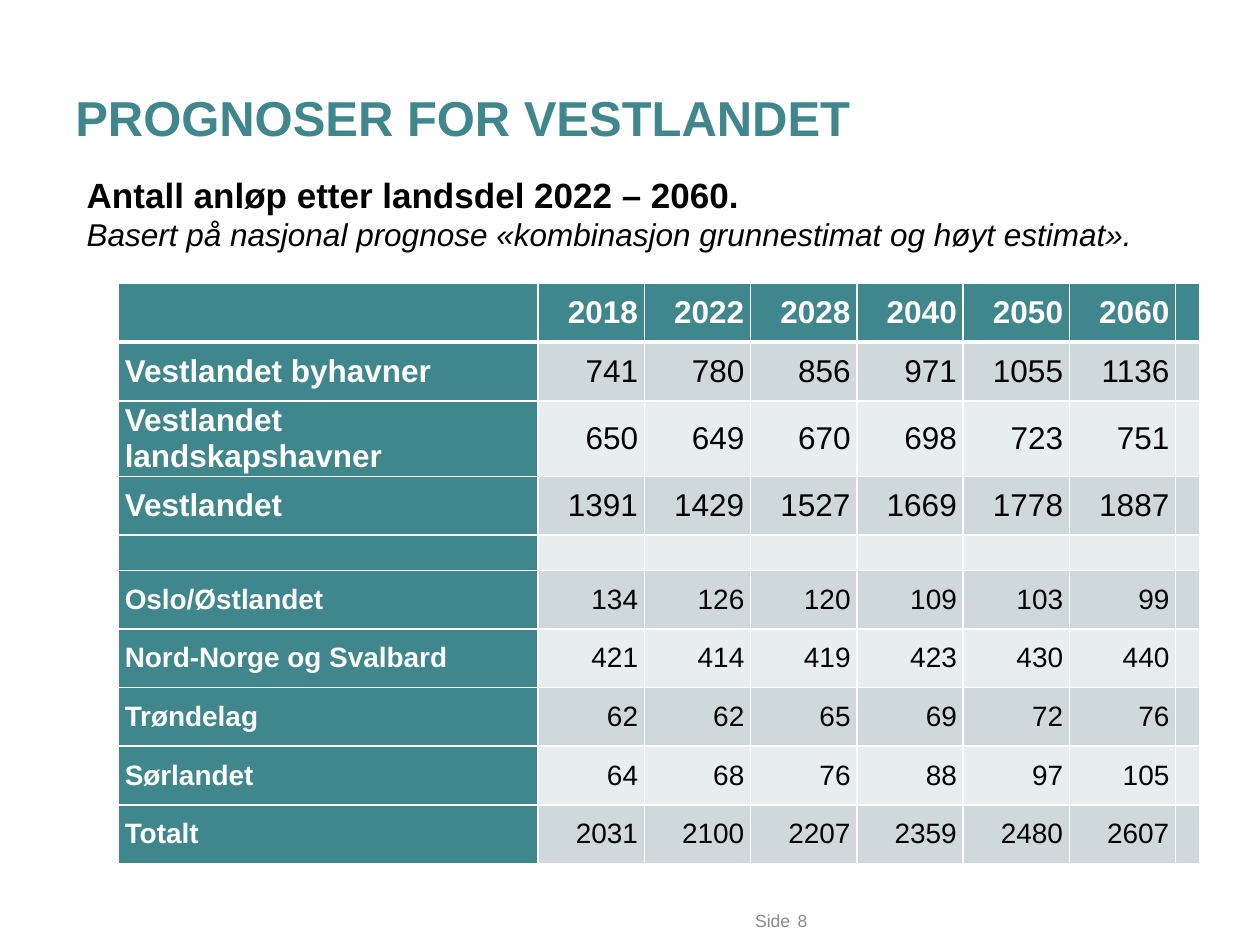
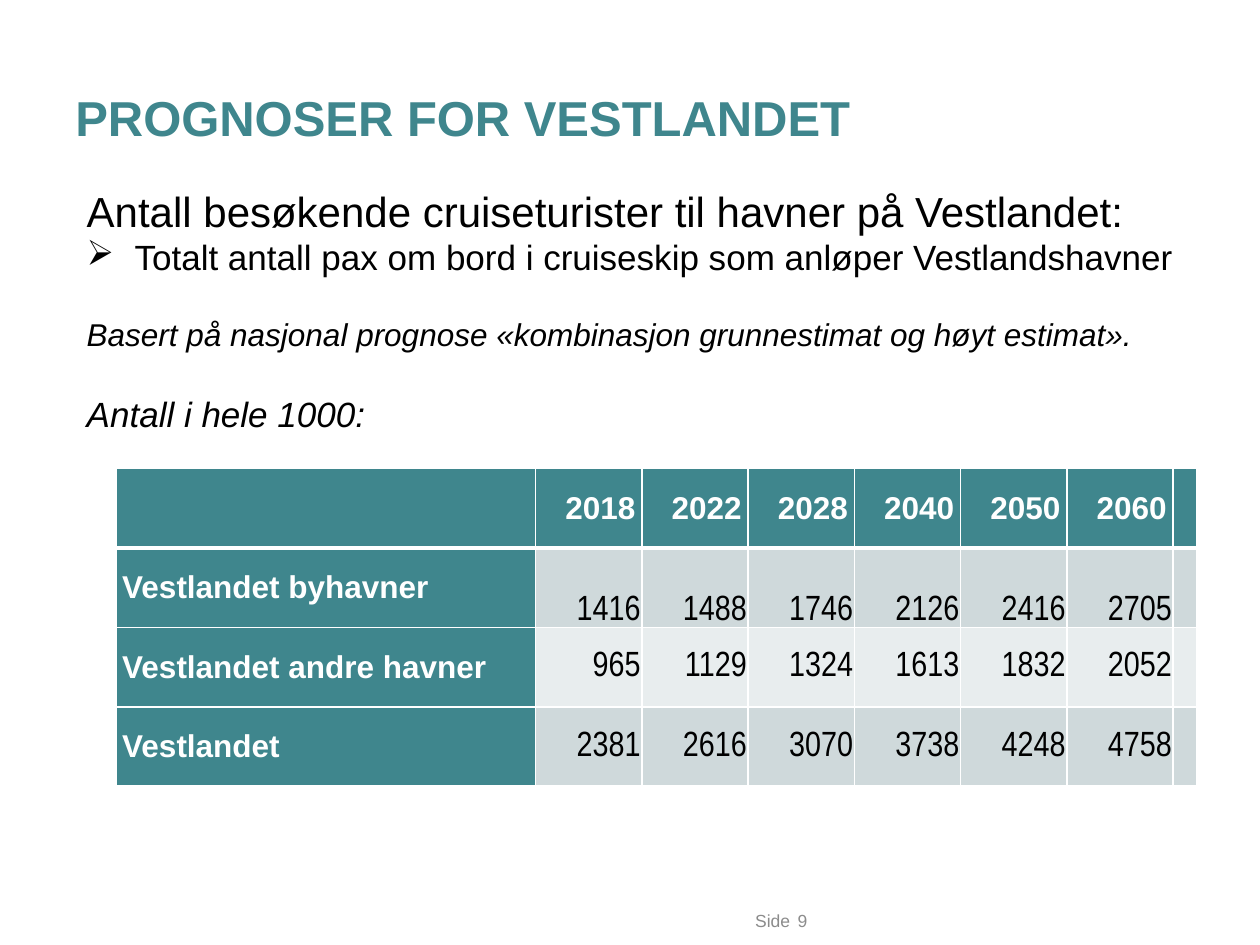
from lxml import etree
from pptx import Presentation
from pptx import util as u
from pptx.dml.color import RGBColor
from pptx.enum import text as t
from pptx.oxml import ns

TEAL = RGBColor(0x3F, 0x86, 0x8D)
BAND_DARK = RGBColor(0xCF, 0xD9, 0xDB)
BAND_LIGHT = RGBColor(0xE8, 0xED, 0xEE)
GREY = RGBColor(0x8C, 0x8C, 0x8C)
WHITE = RGBColor(0xFF, 0xFF, 0xFF)
BLACK = RGBColor(0, 0, 0)

RIGHT = t.PP_ALIGN.RIGHT
LEFT = t.PP_ALIGN.LEFT
MIDDLE = t.MSO_ANCHOR.MIDDLE
BOTTOM = t.MSO_ANCHOR.BOTTOM

TABLE_WIDTH, LABEL_WIDTH, EDGE_WIDTH = 8.58, 3.33, 0.19
SPACER_HEIGHT = 0.28
YEARS = ["2018", "2022", "2028", "2040", "2050", "2060"]
BASIS = "Basert på nasjonal prognose «kombinasjon grunnestimat og høyt estimat»."

CALLS = [
    ("Vestlandet byhavner", 741, 780, 856, 971, 1055, 1136),
    ("Vestlandet landskapshavner", 650, 649, 670, 698, 723, 751),
    ("Vestlandet", 1391, 1429, 1527, 1669, 1778, 1887),
    ("",) * 7,
    ("Oslo/Østlandet", 134, 126, 120, 109, 103, 99),
    ("Nord-Norge og Svalbard", 421, 414, 419, 423, 430, 440),
    ("Trøndelag", 62, 62, 65, 69, 72, 76),
    ("Sørlandet", 64, 68, 76, 88, 97, 105),
    ("Totalt", 2031, 2100, 2207, 2359, 2480, 2607),
]
PASSENGERS = [
    ("Vestlandet byhavner", 1416, 1488, 1746, 2126, 2416, 2705),
    ("Vestlandet andre havner", 965, 1129, 1324, 1613, 1832, 2052),
    ("Vestlandet", 2381, 2616, 3070, 3738, 4248, 4758),
]


def write(paragraph, text, size=18, color=BLACK, bold=False, italic=False,
          font="Arial", align=LEFT, before=0, bullet=None):
    paragraph.alignment = align
    if before:
        paragraph.space_before = u.Pt(before)
    if bullet:
        properties = paragraph._p.get_or_add_pPr()
        properties.set("marL", str(u.Inches(0.38)))
        properties.set("indent", str(-u.Inches(0.38)))
        etree.SubElement(properties, ns.qn("a:buChar")).set("char", bullet)
    run = paragraph.add_run()
    run.text = text
    run.font.name = font
    run.font.size = u.Pt(size)
    run.font.bold = bold
    run.font.italic = italic
    run.font.color.rgb = color


def add_text(slide, left, top, width, height, lines, margins=(0.1, 0.05)):
    box = slide.shapes.add_textbox(*map(u.Inches, (left, top, width, height)))
    frame = box.text_frame
    frame.word_wrap = True
    frame.vertical_anchor = MIDDLE
    frame.margin_left = frame.margin_right = u.Inches(margins[0])
    frame.margin_top = frame.margin_bottom = u.Inches(margins[1])
    for index, (text, style) in enumerate(lines):
        paragraph = frame.add_paragraph() if index else frame.paragraphs[0]
        write(paragraph, text, **style)


def add_forecast_slide(presentation, number):
    slide = presentation.slides.add_slide(presentation.slide_layouts[6])
    add_text(slide, 0.5, 0.3, 9, 1.25, [
        ("PROGNOSER FOR VESTLANDET", dict(size=28, color=TEAL, bold=True))])
    for left, text, align in ((5.79, "Side", RIGHT), (6.33, str(number), LEFT)):
        add_text(slide, left, 7.16, 0.48, 0.29,
                 [(text, dict(size=10, color=GREY, align=align))], margins=(0, 0))
    return slide


def set_borders(cell, top, bottom):
    properties = cell._tc.get_or_add_tcPr()
    for side, points in (("L", 1), ("R", 1), ("T", top), ("B", bottom)):
        line = etree.SubElement(properties, ns.qn(f"a:ln{side}"), w=str(u.Pt(points)))
        fill = etree.SubElement(line, ns.qn("a:solidFill"))
        etree.SubElement(fill, ns.qn("a:srgbClr"), val=str(WHITE))


def fill_cell(cell, text, background, row, anchor=MIDDLE, margins=(0.05, 0), **style):
    set_borders(cell, top=3 if row == 1 else 1, bottom=3 if row == 0 else 1)
    cell.fill.solid()
    cell.fill.fore_color.rgb = background
    cell.vertical_anchor = anchor
    cell.margin_left = cell.margin_right = u.Inches(margins[0])
    cell.margin_top = u.Inches(margins[1])
    cell.margin_bottom = 0
    paragraph = cell.text_frame.paragraphs[0]
    if text:
        write(paragraph, text, **style)
    else:
        etree.SubElement(paragraph._p, ns.qn("a:endParaRPr"), sz="1000")


def add_forecast_table(slide, left, top, records, row_height, label_style, number_style):
    rows = [("", *YEARS, "")] + [(*record, "") for record in records]
    table = slide.shapes.add_table(
        len(rows), len(rows[0]), u.Inches(left), u.Inches(top),
        u.Inches(TABLE_WIDTH), u.Inches(row_height * len(rows))).table
    year_width = (TABLE_WIDTH - LABEL_WIDTH - EDGE_WIDTH) / len(YEARS)
    widths = [LABEL_WIDTH] + [year_width] * len(YEARS) + [EDGE_WIDTH]
    for column, width in zip(table.columns, widths):
        column.width = u.Inches(width)
    for row, values in enumerate(rows):
        table.rows[row].height = u.Inches(row_height if any(values) else SPACER_HEIGHT)
        band = BAND_DARK if row % 2 else BAND_LIGHT
        for column, value in enumerate(values):
            if row == 0:
                background, style = TEAL, dict(color=WHITE, bold=True, align=RIGHT)
            elif column == 0:
                background, style = TEAL, dict(color=WHITE, bold=True, **label_style(row))
            else:
                background, style = band, dict(align=RIGHT, **number_style(row))
            fill_cell(table.cell(row, column), str(value), background, row, **style)


def call_style(row):
    return dict(size=18 if row <= 3 else 16)


def passenger_label_style(row):
    return dict(size=18)


def passenger_number_style(row):
    return dict(size=20, font="Arial Narrow", margins=(0.01, 0.01),
                anchor=BOTTOM if row == 1 else MIDDLE)


def add_calls(presentation):
    slide = add_forecast_slide(presentation, 8)
    add_forecast_table(slide, 0.94, 2.25, CALLS, 4.19 / 9, call_style, call_style)
    add_text(slide, 0.59, 1.32, 9.74, 0.74, [
        ("Antall anløp etter landsdel 2022 – 2060.", dict(size=20, bold=True)),
        (BASIS, dict(italic=True)),
    ])


def add_passengers(presentation):
    slide = add_forecast_slide(presentation, 9)
    add_forecast_table(slide, 0.92, 3.72, PASSENGERS, 0.63,
                       passenger_label_style, passenger_number_style)
    add_text(slide, 0.59, 1.4, 9.74, 2.12, [
        ("Antall besøkende cruiseturister til havner på Vestlandet:", dict(size=24)),
        ("Totalt antall pax om bord i cruiseskip som anløper Vestlandshavner",
         dict(size=20, bullet="➢")),
        (BASIS, dict(italic=True, before=21)),
        ("Antall i hele 1000:", dict(size=20, italic=True, before=23)),
    ])


def main():
    presentation = Presentation()
    presentation.slide_width = u.Inches(10)
    presentation.slide_height = u.Inches(7.5)
    add_calls(presentation)
    add_passengers(presentation)
    presentation.save("out.pptx")


if __name__ == "__main__":
    main()
